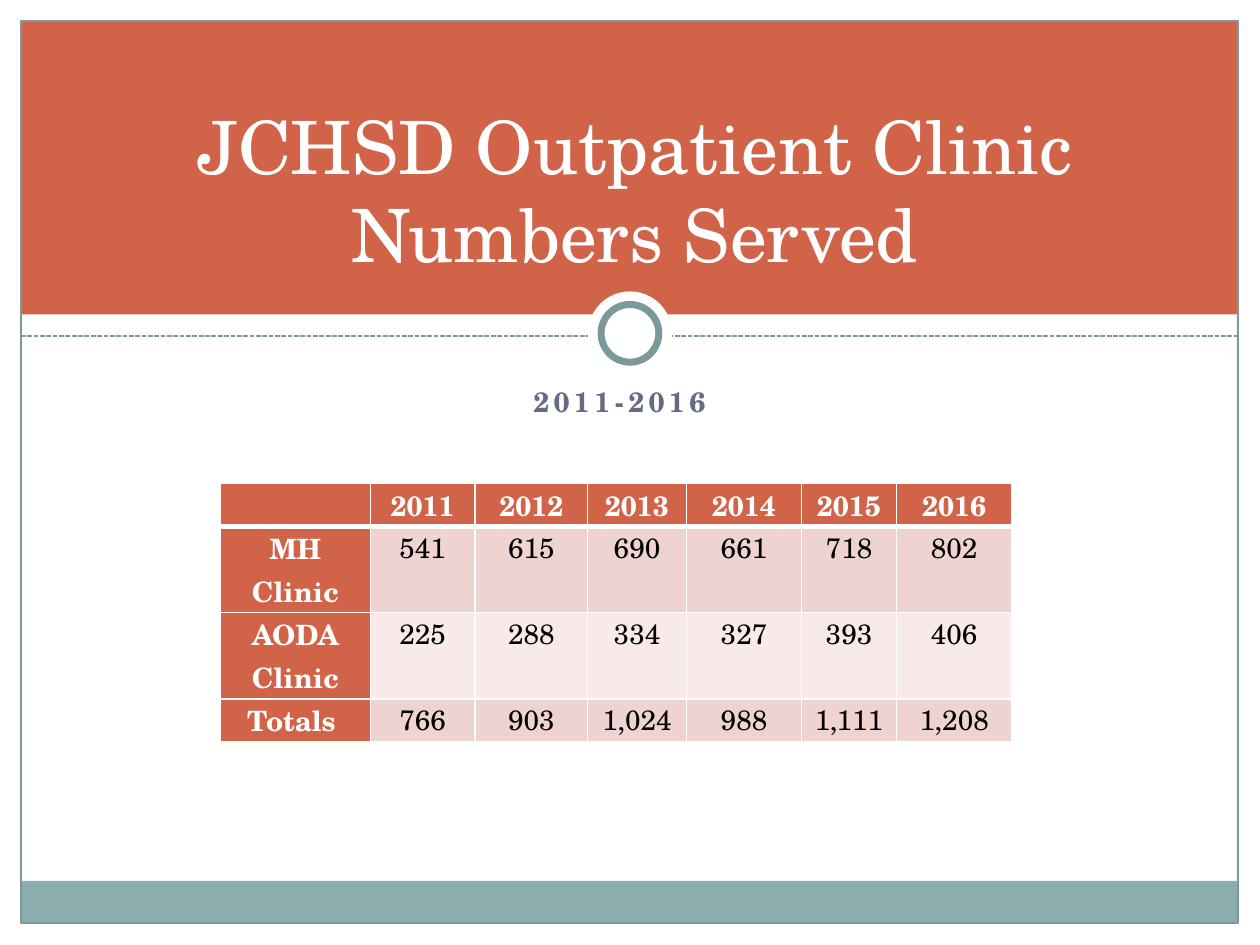
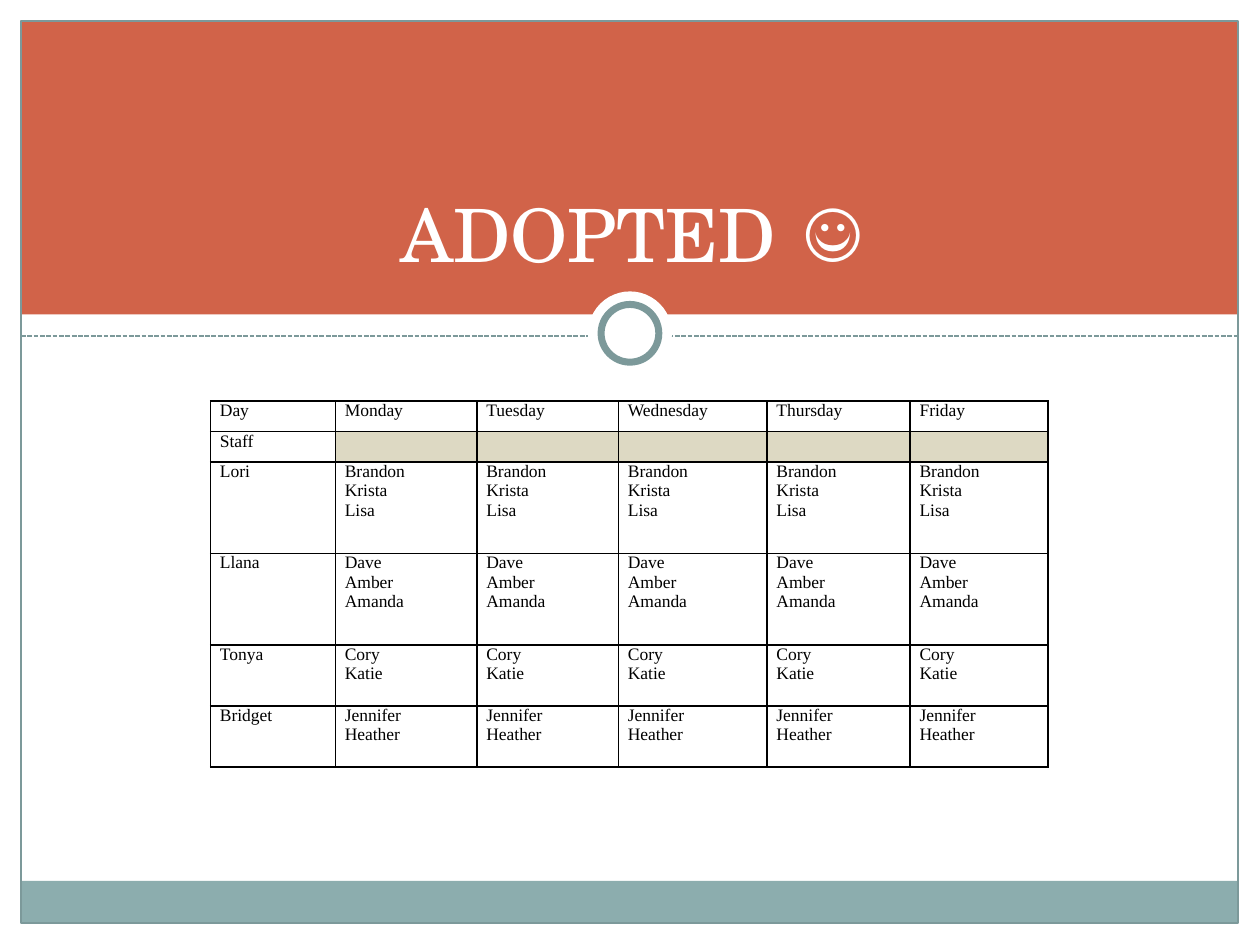
"""Build two clinic slides that share one banded frame."""
import pptx
import pptx.dml.color
import pptx.enum.dml
import pptx.enum.shapes
import pptx.enum.text
import pptx.oxml.ns
import pptx.util
from lxml import etree

Pt = pptx.util.Pt
qn = pptx.oxml.ns.qn
Shape = pptx.enum.shapes.MSO_SHAPE
Align = pptx.enum.text.PP_ALIGN
Anchor = pptx.enum.text.MSO_ANCHOR

HUES = {
    "white": "FFFFFF", "black": "000000", "rust": "D16349", "teal": "8CADAE",
    "edge": "7C999A", "slate": "646B86", "rose": "EED3D0", "blush": "F7EAE9",
    "sand": "DDD9C3",
}
SERIF = "TeX Gyre Schola"
ROMAN = "Times New Roman"


def hue(name):
    """Return the named colour."""
    return pptx.dml.color.RGBColor.from_string(HUES[name])


def write(frame, text, size=16, font=SERIF, color="black", bold=False,
          align=Align.CENTER, track=None):
    """Fill a text frame and format every run."""
    frame.text = text
    for para in frame.paragraphs:
        para.alignment = align
        for run in para.runs:
            run.font.size = Pt(size)
            run.font.name = font
            run.font.bold = bold
            run.font.color.rgb = hue(color)
            if track:
                run.font._element.set("spc", str(track))
        if not para.runs:
            etree.SubElement(para._p, qn("a:endParaRPr"), sz=str(size * 100))


def rule(cell, color, widths):
    """Set the left, right, top and bottom borders of a cell."""
    props = cell._tc.get_or_add_tcPr()
    for side, width in zip("LRTB", widths):
        line = etree.SubElement(props, qn("a:ln" + side), w=str(Pt(width)))
        fill = etree.SubElement(line, qn("a:solidFill"))
        etree.SubElement(fill, qn("a:srgbClr"), val=HUES[color])


class Deck:
    """Hold the presentation, its style and the current slide."""

    def __init__(self):
        """Start an empty deck."""
        self.show = pptx.Presentation()
        self.show.slide_width = Pt(720)
        self.show.slide_height = Pt(540)
        self.slide = None

    def page(self, layout):
        """Add a slide and make it current."""
        self.slide = self.show.slides.add_slide(self.show.slide_layouts[layout])

    def form(self, kind, box, fill=None, line=None, width=0.75):
        """Draw a preset shape."""
        item = self.slide.shapes.add_shape(kind, *map(Pt, box))
        item.shadow.inherit = False
        if fill:
            item.fill.solid()
            item.fill.fore_color.rgb = hue(fill)
        else:
            item.fill.background()
        if line:
            item.line.color.rgb = hue(line)
            item.line.width = Pt(width)
        else:
            item.line.fill.background()
        return item

    def dash(self, start, end):
        """Draw a dashed line."""
        item = self.slide.shapes.add_connector(
            pptx.enum.shapes.MSO_CONNECTOR.STRAIGHT, *map(Pt, start + end))
        item.line.color.rgb = hue("edge")
        item.line.width = Pt(0.9)
        item.line.dash_style = pptx.enum.dml.MSO_LINE.SQUARE_DOT
        etree.SubElement(item._element.spPr, qn("a:effectLst"))
        return item

    def frame(self):
        """Draw the shared bands and ring, then move them to the master."""
        bands = [((0, 528, 720, 12), "white"), ((0, 0, 720, 12), "white"),
                 ((708, 0, 12, 540), "white"), ((12, 180, 695.5, 24), "white"),
                 ((12, 12, 695.5, 167.6), "rust"),
                 ((12, 503.3, 695.5, 24.3), "teal")]
        items = [self.form(Shape.RECTANGLE, box, fill) for box, fill in bands]
        items += [
            self.form(Shape.RECTANGLE, (12, 12, 695.5, 515.5), line="edge"),
            self.dash((12, 192), (707.5, 192)),
            self.form(Shape.OVAL, (336, 166.5, 48, 48), "white"),
            self.form(Shape.OVAL, (343.5, 174, 33, 33), "white", "edge", 4),
        ]
        tree = self.show.slide_master.shapes.element
        for spot, item in enumerate(items):
            next(item.element.iter(qn("p:cNvPr"))).set("id", str(100 + spot))
            tree.insert(2 + spot, item.element)

    def place(self, hold, box, anchor):
        """Move a placeholder and return its text frame."""
        hold.left, hold.top, hold.width, hold.height = map(Pt, box)
        frame = hold.text_frame
        frame.auto_size = pptx.enum.text.MSO_AUTO_SIZE.NONE
        frame.vertical_anchor = anchor
        return frame

    def title(self, text):
        """Write the slide title in the top band."""
        frame = self.place(self.slide.shapes.title, (56.8, 42, 612, 120),
                           Anchor.BOTTOM)
        write(frame, text, size=42, color="white")

    def body(self, text):
        """Write a spaced subtitle in the body placeholder."""
        frame = self.place(self.slide.placeholders[1], (42, 216, 624, 264),
                           Anchor.TOP)
        write(frame, text, color="slate", bold=True, track=250)
        props = frame.paragraphs[0]._p.get_or_add_pPr()
        props.set("marL", "0")
        props.set("indent", "0")
        etree.SubElement(props, qn("a:buNone"))

    def table(self, spot, cols, highs, rows, look):
        """Add a table whose cells take their format from look."""
        grid = self.slide.shapes.add_table(
            len(rows), len(cols), *map(Pt, spot + (sum(cols), sum(highs)))).table
        grid.first_row = grid.horz_banding = False
        for col, width in zip(grid.columns, cols):
            col.width = Pt(width)
        for row, high in zip(grid.rows, highs):
            row.height = Pt(high)
        for r, row in enumerate(rows):
            for c, text in enumerate(row):
                cell = grid.cell(r, c)
                fill, line, widths, style = look(r, c)
                cell.margin_left = cell.margin_right = Pt(5.4)
                cell.margin_top = cell.margin_bottom = 0
                write(cell.text_frame, text, **style)
                rule(cell, line, widths)
                if fill:
                    cell.fill.solid()
                    cell.fill.fore_color.rgb = hue(fill)
                else:
                    cell.fill.background()


def count(r, c):
    """Format a cell of the numbers table."""
    head = r == 0 or c == 0
    fill = "rust" if head else "rose" if r % 2 else "blush"
    widths = (1, 1, 3 if r == 1 else 1, 3 if r == 0 else 1)
    style = {"color": "white" if head else "black", "bold": head}
    return fill, "white", widths, style


def shift(r, c):
    """Format a cell of the staff table."""
    fill = "sand" if r == 1 and c else None
    style = {"size": 10, "font": ROMAN, "align": Align.LEFT}
    return fill, "black", (1, 1, 1, 1), style


def main():
    """Build and save both slides."""
    deck = Deck()
    deck.page(1)
    deck.frame()
    deck.body("2011-2016")
    deck.title("JCHSD Outpatient Clinic\vNumbers Served")
    rows = [
        ["", *map(str, range(2011, 2017))],
        ["MH Clinic", "541", "615", "690", "661", "718", "802"],
        ["AODA Clinic", "225", "288", "334", "327", "393", "406"],
        ["Totals ", "766", "903", "1,024", "988", "1,111", "1,208"],
    ]
    deck.table((126, 276.2), [85.6, 59.9, 64.3, 56.5, 65.8, 54.2, 66],
               [24.6 * n for n in (1, 2, 2, 1)], rows, count)

    deck.page(5)
    deck.title("ADOPTED ☺")
    days = ["Monday", "Tuesday", "Wednesday", "Thursday", "Friday"]
    teams = {"Staff": "", "Lori": "Brandon\nKrista\nLisa",
             "Llana": "Dave\nAmber\nAmanda", "Tonya": "Cory\nKatie",
             "Bridget": "Jennifer\nHeather"}
    rows = [["Day", *days]]
    rows += [[lead] + [team] * len(days) for lead, team in teams.items()]
    deck.table((120.3, 229.2), [71.4, 80.9, 80.9, 84.9, 81.8, 78.9],
               [17.42 * n for n in (1, 1, 3, 3, 2, 2)], rows, shift)
    deck.show.save("out.pptx")


if __name__ == "__main__":
    main()
